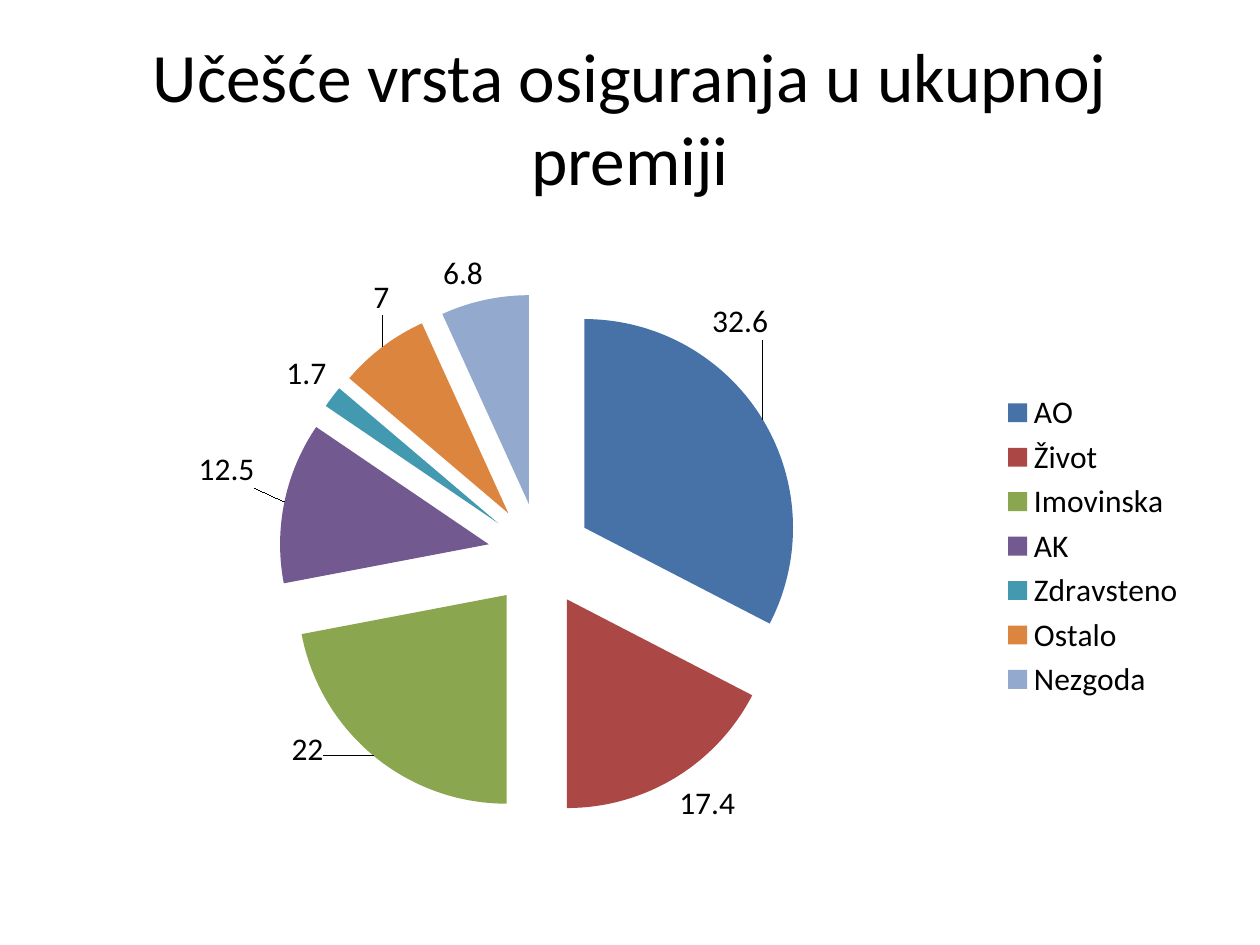
from lxml import etree
from pptx import Presentation
from pptx.chart.data import CategoryChartData
from pptx.dml.color import RGBColor
from pptx.enum.chart import XL_CHART_TYPE as CT, XL_LABEL_POSITION as LP, XL_LEGEND_POSITION as LEG
from pptx.enum.text import MSO_ANCHOR as ANC, PP_ALIGN as AL
from pptx.oxml import parse_xml
from pptx.oxml.ns import nsdecls, qn
from pptx.util import Inches, Pt

FONT = "Calibri"
COLORS = {
    "text": "000000",
    "AO": "4672A8",
    "Život": "AB4744",
    "Imovinska": "8AA64F",
    "AK": "725990",
    "Zdravsteno": "4299B0",
    "Ostalo": "DC853E",
    "Nezgoda": "93A9CE",
}
SHARES = {
    "AO": 32.6,
    "Život": 17.4,
    "Imovinska": 22,
    "AK": 12.5,
    "Zdravsteno": 1.7,
    "Ostalo": 7,
    "Nezgoda": 6.8,
}
LABEL_SHIFTS = {
    "AO": (-0.05, -0.12),
    "Imovinska": (-0.04, -0.05),
    "AK": (-0.02, -0.02),
    "Ostalo": (0.01, -0.04),
}


def style_font(font, size, color):
    """Set the typeface, size and colour of a font."""
    font.name = FONT
    font.size = Pt(size)
    font.color.rgb = RGBColor.from_string(COLORS[color])


def add_text(s, text, box, size=18, color="text", align=AL.LEFT, anchor=ANC.TOP):
    """Add a wrapped text box with one formatted paragraph."""
    tf = s.shapes.add_textbox(*map(Inches, box)).text_frame
    tf.word_wrap = True
    tf.vertical_anchor = anchor
    p = tf.paragraphs[0]
    p.alignment = align
    r = p.add_run()
    r.text = text
    style_font(r.font, size, color)


def shift_label(labels, idx, dx, dy):
    """Move one data label by fractions of the chart size."""
    label = next(d for d in labels.findall(qn("c:dLbl"))
                 if d.find(qn("c:idx")).get("val") == str(idx))
    layout = parse_xml(f"<c:layout {nsdecls('c')}/>")
    manual = etree.SubElement(layout, qn("c:manualLayout"))
    for axis, value in (("x", dx), ("y", dy)):
        etree.SubElement(manual, qn(f"c:{axis}")).set("val", str(value))
    label.insert(1, layout)


def add_share_pie(s, box):
    """Add the exploded pie of premium shares with its legend."""
    data = CategoryChartData()
    data.categories = list(SHARES)
    data.add_series("Series 1", list(SHARES.values()))
    chart = s.shapes.add_chart(CT.PIE_EXPLODED, *map(Inches, box), data).chart
    style_font(chart.font, 18, "text")
    chart.has_title = False
    chart.has_legend = True
    chart.legend.position = LEG.RIGHT
    chart.legend.include_in_layout = False
    plot = chart.plots[0]
    plot.vary_by_categories = True
    series = plot.series[0]
    labels = series.data_labels
    labels.show_value = True
    labels.position = LP.OUTSIDE_END
    for i, name in enumerate(SHARES):
        point = series.points[i]
        point.format.fill.solid()
        point.format.fill.fore_color.rgb = RGBColor.from_string(COLORS[name])
        if name in LABEL_SHIFTS:
            point.data_label.position = LP.OUTSIDE_END
            shift_label(series._element.find(qn("c:dLbls")), i, *LABEL_SHIFTS[name])


def main():
    """Build and save the slide."""
    prs = Presentation()
    prs.slide_width, prs.slide_height = Inches(10), Inches(7.5)
    s = prs.slides.add_slide(prs.slide_layouts[6])
    add_text(s, "Učešće vrsta osiguranja u ukupnoj premiji", (0.5, 0.3, 9, 1.25),
             size=39.6, align=AL.CENTER, anchor=ANC.MIDDLE)
    add_share_pie(s, (0.51, 1.86, 9, 4.95))
    prs.save("out.pptx")


if __name__ == "__main__":
    main()
